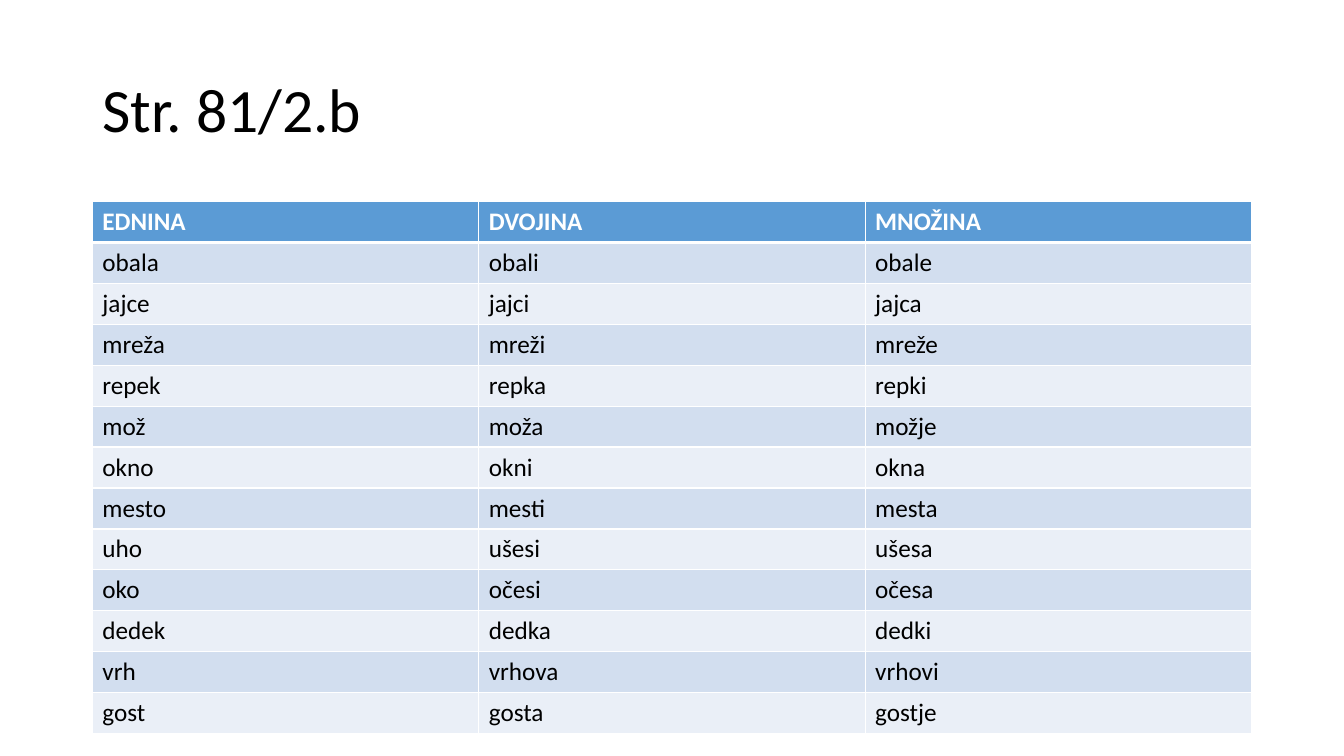
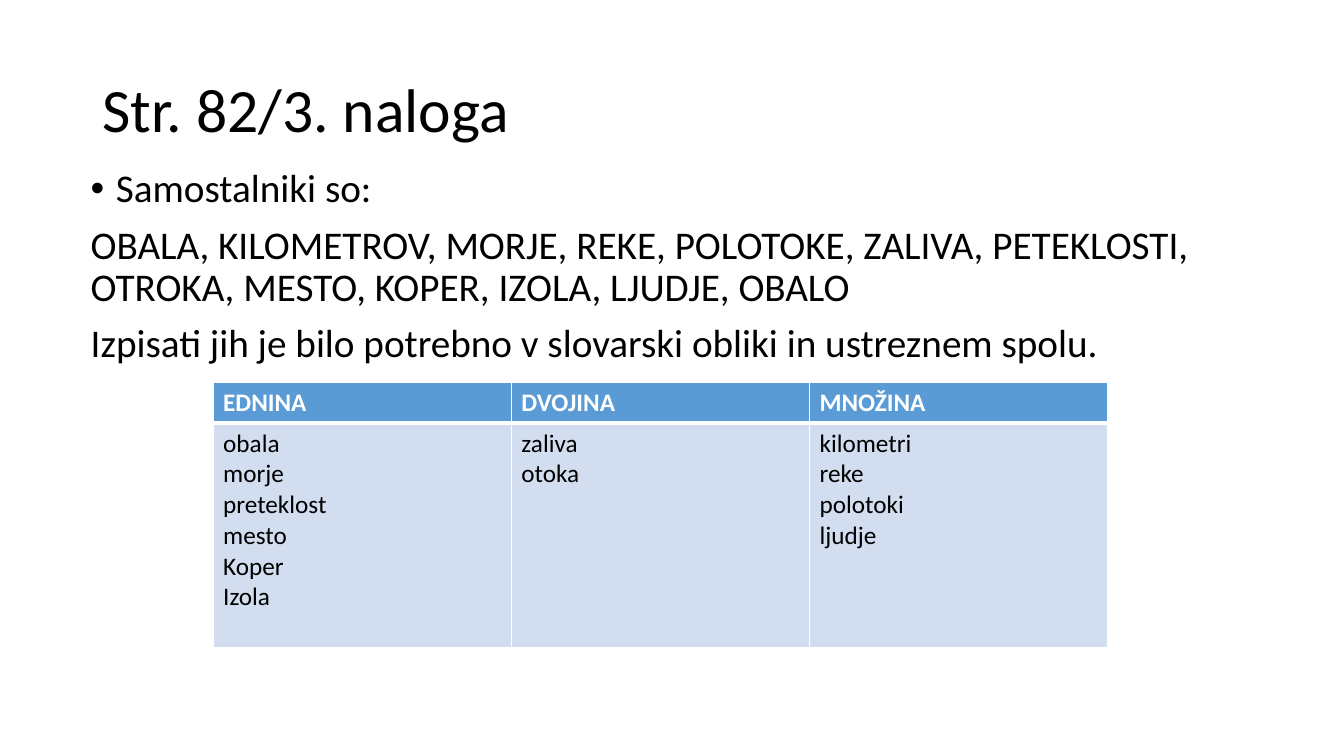
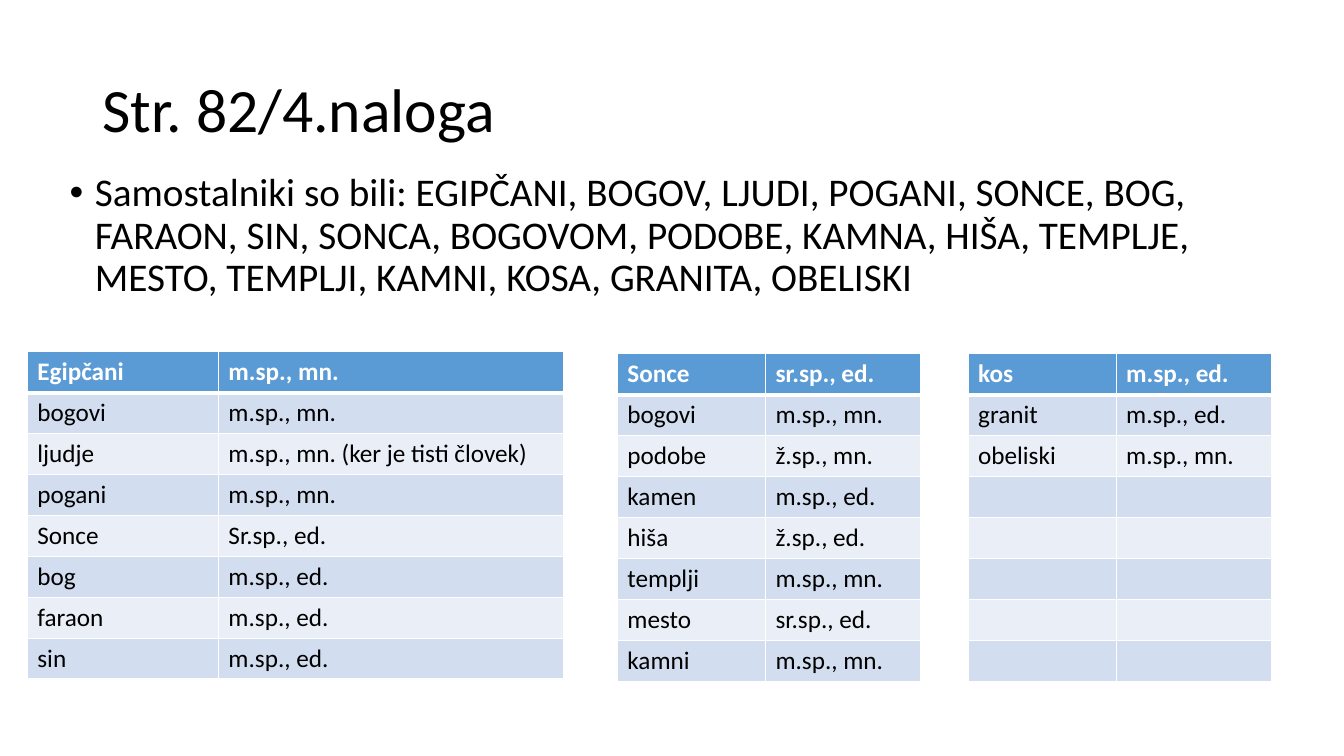
from dataclasses import dataclass

from lxml.etree import SubElement
from pptx import Presentation
from pptx.dml.color import RGBColor
from pptx.enum.text import MSO_ANCHOR, MSO_AUTO_SIZE, PP_ALIGN
from pptx.oxml import parse_xml
from pptx.oxml.ns import nsdecls, qn
from pptx.util import Emu, Pt


@dataclass(frozen=True)
class Theme:
    """Colours, font and sizes shared by all slides."""

    font: str = "Calibri"
    ink: str = "000000"
    paper: str = "FFFFFF"
    header: str = "5B9BD5"
    bands: tuple = ("D2DEEF", "EAEFF7")
    title_size: int = 44
    body_size: int = 28
    table_size: int = 18
    line_spacing: float = 0.9
    paragraph_gap: int = 10
    grid_line: int = 1
    header_line: int = 3


THEME = Theme()
EMU_PER_PX = 9525
SLIDE_SIZE = (1280, 720)
TITLE_BOX = (88, 38, 1104, 139)
BODY_SIZE = (1104, 457)
BULLET_INDENT = 24
ROW_HEIGHT = 39
NUMBERS = ("EDNINA", "DVOJINA", "MNOŽINA")

NOUN_FORMS = [
    NUMBERS,
    ("obala", "obali", "obale"),
    ("jajce", "jajci", "jajca"),
    ("mreža", "mreži", "mreže"),
    ("repek", "repka", "repki"),
    ("mož", "moža", "možje"),
    ("okno", "okni", "okna"),
    ("mesto", "mesti", "mesta"),
    ("uho", "ušesi", "ušesa"),
    ("oko", "očesi", "očesa"),
    ("dedek", "dedka", "dedki"),
    ("vrh", "vrhova", "vrhovi"),
    ("gost", "gosta", "gostje"),
]
NOUNS_BY_NUMBER = [
    NUMBERS,
    (
        "obala\nmorje\npreteklost\nmesto\nKoper\nIzola",
        "zaliva\notoka",
        "kilometri\nreke\npolotoki\nljudje",
    ),
]
EGYPTIANS = [
    ("Egipčani", "m.sp., mn."),
    ("bogovi", "m.sp., mn."),
    ("ljudje", "m.sp., mn. (ker je tisti človek)"),
    ("pogani", "m.sp., mn."),
    ("Sonce", "Sr.sp., ed."),
    ("bog", "m.sp., ed."),
    ("faraon", "m.sp., ed."),
    ("sin", "m.sp., ed."),
]
SUN = [
    ("Sonce", "sr.sp., ed."),
    ("bogovi", "m.sp., mn."),
    ("podobe", "ž.sp., mn."),
    ("kamen", "m.sp., ed."),
    ("hiša", "ž.sp., ed."),
    ("templji", "m.sp., mn."),
    ("mesto", "sr.sp., ed."),
    ("kamni", "m.sp., mn."),
]
PIECE = [
    ("kos", "m.sp., ed."),
    ("granit", "m.sp., ed."),
    ("obeliski", "m.sp., mn."),
] + [("", "")] * 5


def px(length):
    """Turn pixels into EMU."""
    return Emu(length * EMU_PER_PX)


def add_text(paragraph, text, size, color=THEME.ink, bold=False):
    """Add one formatted run to a paragraph."""
    run = paragraph.add_run()
    run.text = text
    run.font.name = THEME.font
    run.font.size = Pt(size)
    run.font.bold = bold
    run.font.color.rgb = RGBColor.from_string(color)


def add_titled_slide(deck, text):
    """Add a title-only slide and format its title."""
    slide = deck.slides.add_slide(deck.slide_layouts[5])
    title = slide.shapes.title
    title.left, title.top, title.width, title.height = map(px, TITLE_BOX)
    frame = title.text_frame
    frame.word_wrap = True
    frame.auto_size = MSO_AUTO_SIZE.NONE
    frame.vertical_anchor = MSO_ANCHOR.MIDDLE
    heading = frame.paragraphs[0]
    heading.alignment = PP_ALIGN.LEFT
    heading.line_spacing = THEME.line_spacing
    add_text(heading, text, THEME.title_size)
    return slide


def add_bullet(paragraph):
    """Give a paragraph a hanging bullet."""
    properties = paragraph._p.get_or_add_pPr()
    properties.set("marL", str(px(BULLET_INDENT)))
    properties.set("indent", str(px(-BULLET_INDENT)))
    SubElement(properties, qn("a:buFont"), typeface="Arial")
    SubElement(properties, qn("a:buChar"), char="•")


def add_body(slide, left, top, lines):
    """Place the body text, with a bullet on its first line."""
    frame = slide.shapes.add_textbox(*map(px, (left, top, *BODY_SIZE))).text_frame
    frame.word_wrap = True
    for index, line in enumerate(lines):
        paragraph = frame.add_paragraph() if index else frame.paragraphs[0]
        paragraph.line_spacing = THEME.line_spacing
        paragraph.space_before = Pt(THEME.paragraph_gap)
        if index == 0:
            add_bullet(paragraph)
        add_text(paragraph, line, THEME.body_size)


def set_borders(cell, row):
    """Draw the white grid, heavier below the header row."""
    properties = cell._tc.get_or_add_tcPr()
    heavy_side = {0: "B", 1: "T"}.get(row)
    for position, side in enumerate("LRTB"):
        points = THEME.header_line if side == heavy_side else THEME.grid_line
        properties.insert(position, parse_xml(
            f'<a:ln{side} {nsdecls("a")} w="{Pt(points)}"><a:solidFill>'
            f'<a:srgbClr val="{THEME.paper}"/></a:solidFill></a:ln{side}>'
        ))


def fill_cell(cell, text, row):
    """Fill, border and write one table cell."""
    is_header = row == 0
    fill = THEME.header if is_header else THEME.bands[(row - 1) % 2]
    cell.fill.solid()
    cell.fill.fore_color.rgb = RGBColor.from_string(fill)
    set_borders(cell, row)
    if not text:
        return
    color = THEME.paper if is_header else THEME.ink
    for index, word in enumerate(text.split("\n")):
        frame = cell.text_frame
        paragraph = frame.add_paragraph() if index else frame.paragraphs[0]
        add_text(paragraph, word, THEME.table_size, color, is_header)


def add_word_table(slide, left, top, widths, words, row_height=ROW_HEIGHT):
    """Place a banded table with a header of standard height."""
    heights = [ROW_HEIGHT] + [row_height] * (len(words) - 1)
    box = map(px, (left, top, sum(widths), sum(heights)))
    table = slide.shapes.add_table(len(words), len(widths), *box).table
    for column, width in zip(table.columns, widths):
        column.width = px(width)
    for row, height in zip(table.rows, heights):
        row.height = px(height)
    for row, texts in enumerate(words):
        for column, text in enumerate(texts):
            fill_cell(table.cell(row, column), text, row)


def build_noun_forms(deck):
    """Build the slide with the three forms of each noun."""
    slide = add_titled_slide(deck, "Str. 81/2.b")
    add_word_table(slide, 88, 192, [368] * 3, NOUN_FORMS)


def build_nouns_by_number(deck):
    """Build the slide that sorts nouns by number."""
    slide = add_titled_slide(deck, "Str. 82/3. naloga")
    add_body(slide, 77, 156, [
        "Samostalniki so:",
        "OBALA, KILOMETROV, MORJE, REKE, POLOTOKE, ZALIVA, PETEKLOSTI, "
        "OTROKA, MESTO, KOPER, IZOLA, LJUDJE, OBALO",
        "Izpisati jih je bilo potrebno v slovarski obliki in ustreznem spolu.",
    ])
    add_word_table(slide, 203, 364, [284] * 3, NOUNS_BY_NUMBER, 214)


def build_gender_and_number(deck):
    """Build the slide with the gender and number of each noun."""
    slide = add_titled_slide(deck, "Str. 82/4.naloga")
    add_body(slide, 57, 160, [
        "Samostalniki so bili: EGIPČANI, BOGOV, LJUDI, POGANI, SONCE, BOG, "
        "FARAON, SIN, SONCA, BOGOVOM, PODOBE, KAMNA, HIŠA, TEMPLJE, MESTO, "
        "TEMPLJI, KAMNI, KOSA, GRANITA, OBELISKI",
    ])
    add_word_table(slide, 26, 335, [182, 329], EGYPTIANS)
    for left, words in ((588, SUN), (922, PIECE)):
        add_word_table(slide, left, 337, [141, 148], words)


def main():
    """Build and save the presentation."""
    deck = Presentation()
    deck.slide_width, deck.slide_height = map(px, SLIDE_SIZE)
    build_noun_forms(deck)
    build_nouns_by_number(deck)
    build_gender_and_number(deck)
    deck.save("out.pptx")


if __name__ == "__main__":
    main()
